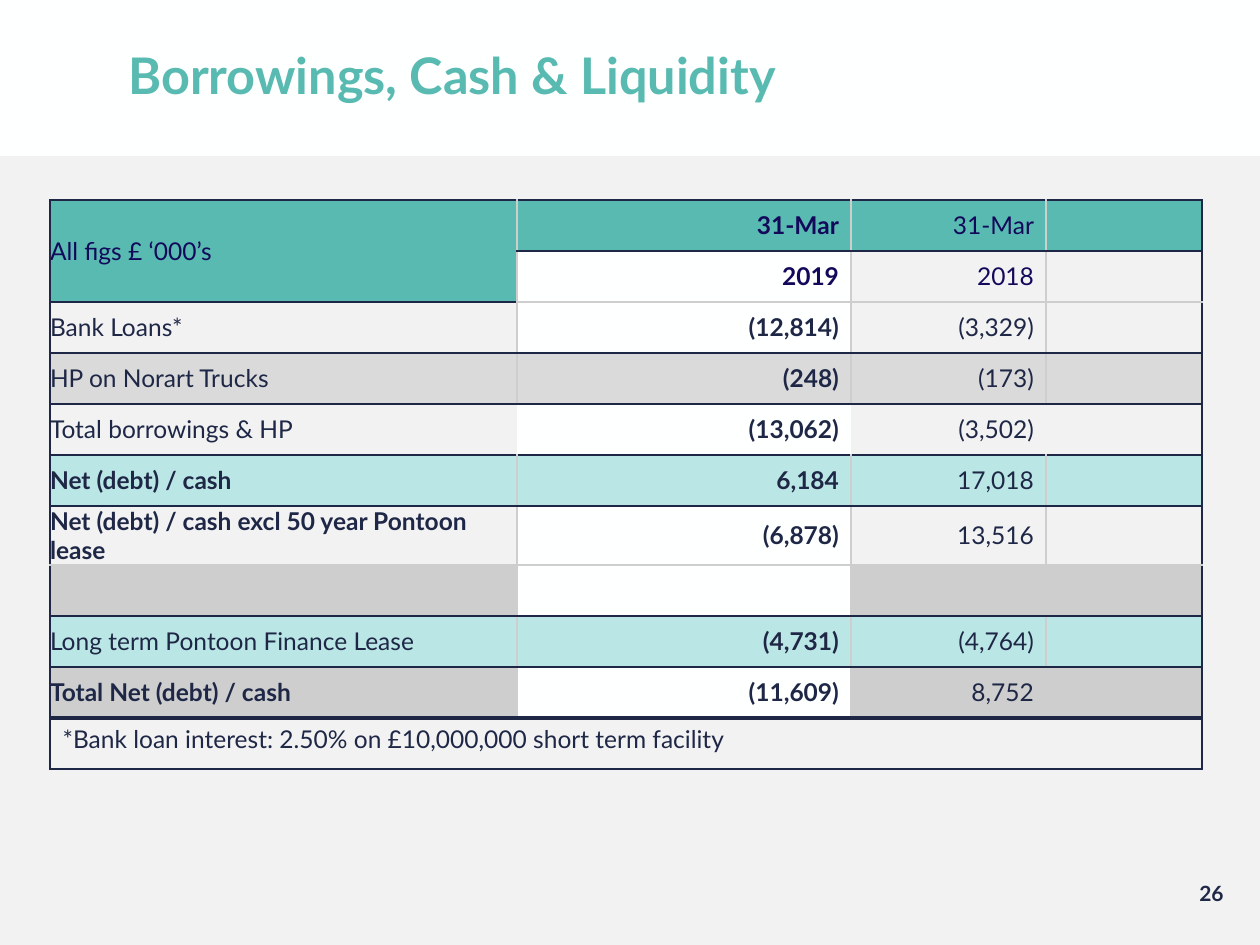
from lxml import etree
from pptx import Presentation
from pptx.dml.color import RGBColor
from pptx.enum.shapes import MSO_SHAPE
from pptx.enum.text import MSO_ANCHOR, PP_ALIGN
from pptx.oxml.ns import qn
from pptx.util import Pt

RECT = MSO_SHAPE.RECTANGLE
TOP, MIDDLE = MSO_ANCHOR.TOP, MSO_ANCHOR.MIDDLE
LEFT, RIGHT = PP_ALIGN.LEFT, PP_ALIGN.RIGHT
SCALE = 914400 / 126
FONT = "Lato"
COLORS = {
    "page": "F2F2F2", "white": "FEFFFF", "teal": "58BAB1", "pale": "BAE6E5",
    "silver": "DADADA", "grey": "CECECE", "dark": "1E2746",
    "number": "1F2846", "indigo": "13095B",
}
COL_WIDTHS = [467, 334, 195, 156]
ROW_HEIGHT, TALL_ROW_HEIGHT, TALL_ROW = 51, 59, 6
LABEL_ROWS = {5, 6, 9}
LIGHT_BOTTOM_ROWS = {1, 6}
OPEN_ROW, TOTAL_ROW = 4, 9
ROWS = [
    ("All figs £ ‘000’s", "31-Mar", "31-Mar", "teal", "teal"),
    ("", "2019", "2018", None, "white"),
    ("Bank Loans*", "(12,814)", "(3,329)", None, "white"),
    ("HP on Norart Trucks", "(248)", "(173)", "silver", "silver"),
    ("Total borrowings & HP", "(13,062)", "(3,502)", None, "white"),
    ("Net (debt) / cash", "6,184", "17,018", "pale", "pale"),
    ("Net (debt) / cash excl 50 year Pontoon lease", "(6,878)", "13,516", None, "white"),
    ("", "", "", "grey", "white"),
    ("Long term Pontoon Finance Lease", "(4,731)", "(4,764)", "pale", "pale"),
    ("Total Net (debt) / cash", "(11,609)", "8,752", "grey", "white"),
]
FOOTNOTE = "*Bank loan interest: 2.50% on £10,000,000 short term facility"


def px(n):
    """Turn pixels into EMU."""
    return round(n * SCALE)


def rgb(name):
    """Look up a named colour."""
    return RGBColor.from_string(COLORS[name])


def write(tf, text, size=14, color="dark", bold=False, align=LEFT):
    """Put one formatted line of text in a text frame."""
    p = tf.paragraphs[0]
    p.alignment = align
    r = p.add_run()
    r.text = text
    r.font.name, r.font.size, r.font.bold = FONT, Pt(size), bold
    r.font.color.rgb = rgb(color)


def add_text(s, box, text, anchor=TOP, **fmt):
    """Add a wrapped text box."""
    tf = s.shapes.add_textbox(*map(px, box)).text_frame
    tf.word_wrap = True
    tf.vertical_anchor = anchor
    write(tf, text, **fmt)


def set_borders(cell, borders):
    """Draw left, right, top and bottom borders given as colour and width."""
    tcPr = cell._tc.get_or_add_tcPr()
    for i, (side, (color, width)) in enumerate(zip("LRTB", borders)):
        ln = etree.Element(qn(f"a:ln{side}"), w=str(Pt(width)))
        if color:
            fill = etree.SubElement(ln, qn("a:solidFill"))
            etree.SubElement(fill, qn("a:srgbClr"), val=COLORS[color])
        else:
            etree.SubElement(ln, qn("a:noFill"))
        tcPr.insert(i, ln)


def bottom_border(row, col):
    """Give the colour and width of the line below a cell."""
    if row in LIGHT_BOTTOM_ROWS and (row, col) != (1, 0):
        return "grey", 1
    return "dark", 3 if row == TOTAL_ROW else 1


def cell_borders(row, col):
    """Give the four borders of a body cell."""
    inner = (None if row == OPEN_ROW else "grey", 1)
    left = ("dark", 1) if col == 0 else inner
    right = ("dark", 1) if col == len(COL_WIDTHS) - 1 else inner
    top = bottom_border(row - 1, col) if row else ("dark", 1)
    return left, right, top, bottom_border(row, col)


def fill_cell(cell, color):
    """Fill a cell, or leave the page showing through."""
    if color:
        cell.fill.solid()
        cell.fill.fore_color.rgb = rgb(color)
    else:
        cell.fill.background()


def add_row(table, row, label, current, prior, fill, current_fill):
    """Fill one row of figures."""
    for col, text in enumerate((label, current, prior, "")):
        cell = table.cell(row, col)
        fill_cell(cell, current_fill if col == 1 else fill)
        cell.vertical_anchor = MIDDLE
        cell.margin_left = cell.margin_top = cell.margin_bottom = 0
        cell.margin_right = px(12 if col else 0)
        if text:
            write(cell.text_frame, text, color="indigo" if row < 2 else "dark",
                  bold=col == 1 or (col == 0 and row in LABEL_ROWS),
                  align=RIGHT if col else LEFT)
        set_borders(cell, cell_borders(row, col))


def add_footnote(table, row):
    """Fill the last row, which spans the table."""
    last = len(COL_WIDTHS) - 1
    for col in range(last + 1):
        cell = table.cell(row, col)
        fill_cell(cell, None)
        set_borders(cell, [("dark", 1), ("dark", 1), ("dark", 3), ("dark", 1)])
    table.cell(row, 0).merge(table.cell(row, last))
    write(table.cell(row, 0).text_frame, FOOTNOTE)


def add_figures(s, left, top):
    """Add the table of borrowings and cash."""
    count = len(ROWS) + 1
    heights = [TALL_ROW_HEIGHT if i == TALL_ROW else ROW_HEIGHT for i in range(count)]
    box = (left, top, sum(COL_WIDTHS), sum(heights))
    table = s.shapes.add_table(count, len(COL_WIDTHS), *map(px, box)).table
    table.first_row = table.horz_banding = False
    for column, width in zip(table.columns, COL_WIDTHS):
        column.width = px(width)
    for row, height in zip(table.rows, heights):
        row.height = px(height)
    for i, values in enumerate(ROWS):
        add_row(table, i, *values)
    table.cell(0, 0).merge(table.cell(1, 0))
    set_borders(table.cell(0, 0), [])
    add_footnote(table, len(ROWS))


def add_header(s, left, top, width, height):
    """Add the white title band and the title."""
    sp = s.shapes.add_shape(RECT, *map(px, (left, top, width, height)))
    sp.shadow.inherit = False
    sp.fill.solid()
    sp.fill.fore_color.rgb = rgb("white")
    sp.line.fill.background()
    add_text(s, (left + 116, top + 42, 1081, 64), "Borrowings, Cash & Liquidity",
             anchor=MIDDLE, size=28.8, color="teal", bold=True)


def main():
    """Build the slide and save it."""
    prs = Presentation()
    prs.slide_width, prs.slide_height = px(1260), px(945)
    s = prs.slides.add_slide(prs.slide_layouts[6])
    s.background.fill.solid()
    s.background.fill.fore_color.rgb = rgb("page")
    add_header(s, 0, 0, 1260, 156)
    add_text(s, (942, 874, 294, 50), "26", size=12, color="number", bold=True, align=RIGHT)
    add_figures(s, 50, 200)
    prs.save("out.pptx")


if __name__ == "__main__":
    main()
